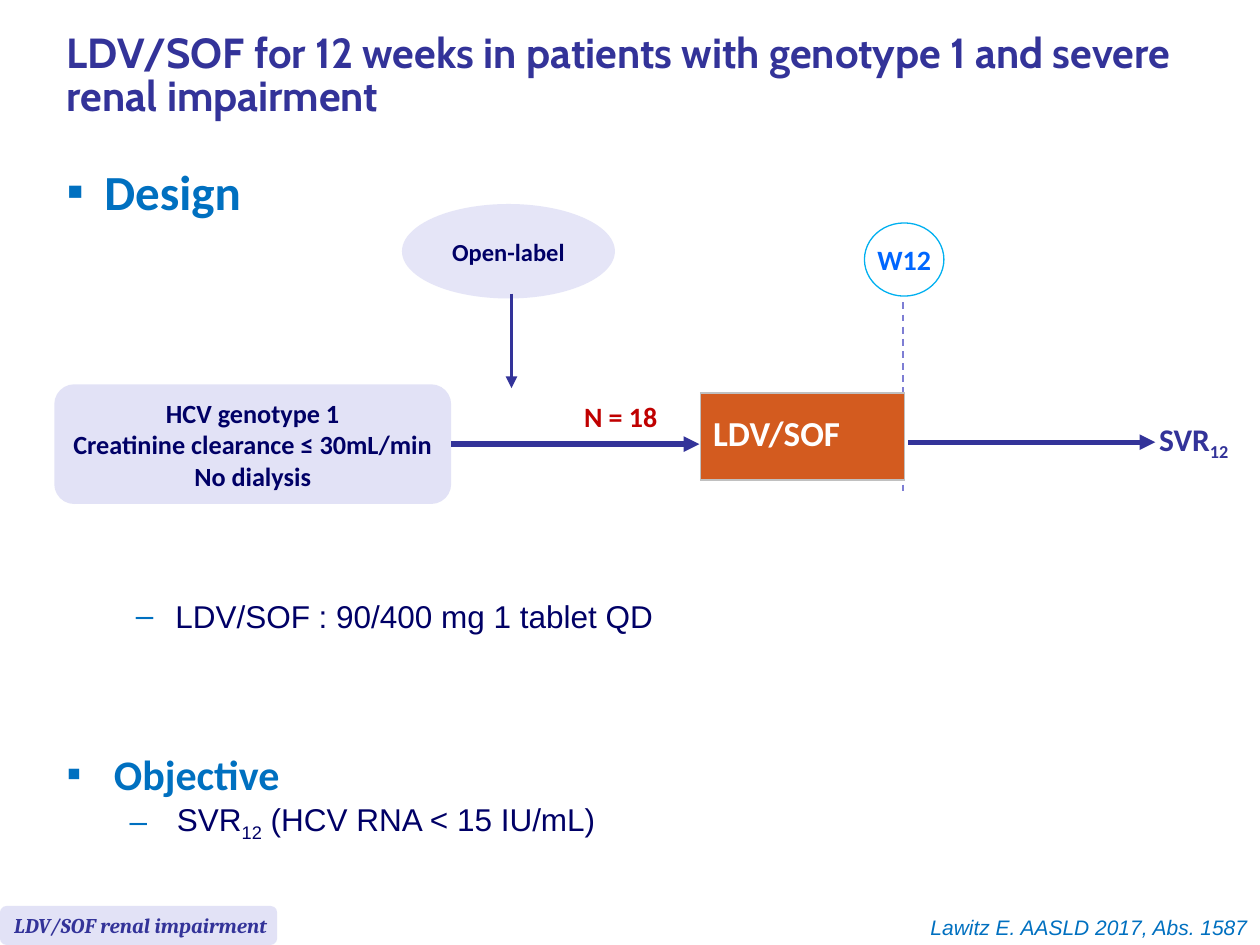
from dataclasses import dataclass

from lxml import etree
from pptx import Presentation
from pptx.dml.color import RGBColor
from pptx.enum import dml, shapes, text
from pptx.oxml import ns
from pptx.util import Pt


@dataclass(frozen=True)
class Theme:
    indigo: str = "333399"
    navy: str = "000066"
    blue: str = "0070C0"
    bright_blue: str = "0066FF"
    cyan: str = "00B0F0"
    red: str = "C00000"
    orange: str = "D35B1F"
    lavender: str = "E2E2F6"
    pale: str = "E5E5F7"
    dash: str = "7E7ED4"
    border: str = "C0C0C0"
    white: str = "FFFFFF"
    heading: int = 28
    title: int = 24
    treatment: int = 20
    body: int = 18
    label: int = 16
    criteria: int = 15
    small: int = 14
    footer: int = 12


theme = Theme()
LEFT, CENTER, RIGHT = text.PP_ALIGN.LEFT, text.PP_ALIGN.CENTER, text.PP_ALIGN.RIGHT


def write(paragraph, content, size, color, face="Calibri", bold=True, italic=False,
          align=LEFT, bullet=None, indent=0, hang=0):
    """Fill a paragraph; a "_" in the content switches subscript on and off."""
    properties = paragraph._p.get_or_add_pPr()
    if bullet:
        properties.set("marL", str(Pt(indent)))
        properties.set("indent", str(-Pt(hang)))
        bullet_color = etree.SubElement(properties, ns.qn("a:buClr"))
        etree.SubElement(bullet_color, ns.qn("a:srgbClr"), val=theme.blue)
        etree.SubElement(properties, ns.qn("a:buFont"), typeface="Arial")
        etree.SubElement(properties, ns.qn("a:buChar"), char=bullet)
    paragraph.alignment = align
    font = paragraph.font
    font.name, font.size, font.bold, font.italic = face, Pt(size), bold, italic
    font.color.rgb = RGBColor.from_string(color)
    for position, part in enumerate(content.split("_")):
        run = paragraph.add_run()
        run.text = part
        if position % 2:
            run._r.get_or_add_rPr().set("baseline", "-25000")


def add_line(start, end, color, width, arrow=True):
    line = slide.shapes.add_connector(
        shapes.MSO_CONNECTOR.STRAIGHT, *(Pt(value) for value in start + end))
    line.line.color.rgb = RGBColor.from_string(color)
    line.line.width = Pt(width)
    if arrow:
        etree.SubElement(line.line._get_or_add_ln(), ns.qn("a:tailEnd"), type="triangle")
    etree.SubElement(line._element.spPr, ns.qn("a:effectLst"))
    return line


presentation = Presentation()
presentation.slide_width, presentation.slide_height = Pt(720), Pt(540)
slide = presentation.slides.add_slide(presentation.slide_layouts[5])

# Title
title = slide.shapes.title
title.left, title.top, title.width, title.height = Pt(31), Pt(5.8), Pt(689), Pt(77)
title.text_frame.vertical_anchor = text.MSO_ANCHOR.MIDDLE
title.text_frame.auto_size = text.MSO_AUTO_SIZE.NONE
title_paragraph = title.text_frame.paragraphs[0]
title_paragraph.line_spacing = 0.85
write(title_paragraph,
      "LDV/SOF for 12 weeks in patients with genotype 1 and severe renal impairment",
      theme.title, theme.indigo, "Cabin")

# Week 12 marker, behind the treatment block
week_line = add_line((516.2, 172.8), (516.2, 280.8), theme.dash, 1, arrow=False)
week_line.line.dash_style = dml.MSO_LINE.DASH

# Treatment block
treatment = slide.shapes.add_table(1, 1, Pt(400.3), Pt(224.6), Pt(116.6), Pt(49.7)).table
cell = treatment.cell(0, 0)
cell.fill.solid()
cell.fill.fore_color.rgb = RGBColor.from_string(theme.orange)
cell.vertical_anchor = text.MSO_ANCHOR.MIDDLE
cell_paragraph = cell.text_frame.paragraphs[0]
cell_paragraph.line_spacing = 0.8
write(cell_paragraph, "LDV/SOF", theme.treatment, theme.white)
cell_properties = cell._tc.get_or_add_tcPr()
for index, side in enumerate(("lnL", "lnR", "lnT", "lnB")):
    edge = etree.Element(ns.qn("a:" + side), w=str(Pt(1)))
    edge_fill = etree.SubElement(edge, ns.qn("a:solidFill"))
    etree.SubElement(edge_fill, ns.qn("a:srgbClr"), val=theme.border)
    cell_properties.insert(index, edge)

# Filled shapes: preset, box, fill, outline, lines of text, size, colour, further style
OVAL, ROUNDED = shapes.MSO_SHAPE.OVAL, shapes.MSO_SHAPE.ROUNDED_RECTANGLE
centered = {"align": CENTER}
nodes = {}
for preset, box, fill, outline, lines, size, color, style in (
    (OVAL, (494, 127.4, 45.4, 41.8), theme.white, theme.cyan,
     ["W12"], theme.label, theme.bright_blue, centered),
    (ROUNDED, (31, 219.6, 226.8, 68.4), theme.lavender, None,
     ["HCV genotype 1", "Creatinine clearance ≤ 30mL/min", "No dialysis"],
     theme.criteria, theme.navy, centered),
    (OVAL, (229.7, 116.6, 121.7, 54), theme.pale, None,
     ["Open-label"], theme.small, theme.navy, centered),
    (ROUNDED, (0, 517.7, 158.4, 22.3), theme.lavender, None,
     ["LDV/SOF renal impairment"], theme.footer, theme.indigo,
     {"face": "Cambria", "italic": True}),
):
    shape = slide.shapes.add_shape(preset, *(Pt(value) for value in box))
    shape.shadow.inherit = False
    shape.fill.solid()
    shape.fill.fore_color.rgb = RGBColor.from_string(fill)
    if outline:
        shape.line.color.rgb = RGBColor.from_string(outline)
        shape.line.width = Pt(0.75)
    else:
        shape.line.fill.background()
    frame = shape.text_frame
    frame.word_wrap = len(lines) > 1
    frame.vertical_anchor = text.MSO_ANCHOR.MIDDLE
    for index, content in enumerate(lines):
        paragraph = frame.add_paragraph() if index else frame.paragraphs[0]
        write(paragraph, content, size, color, **style)
    nodes[lines[0]] = shape

# Flow arrows
enrolment = add_line((257.8, 253.8), (399.6, 253.8), theme.indigo, 3)
enrolment.begin_connect(nodes["HCV genotype 1"], 3)
add_line((519.1, 252.7), (660.2, 252.7), theme.indigo, 3)
add_line((292.3, 167.8), (292.3, 221.8), theme.indigo, 2.25)

# Text boxes: box, wrap, paragraphs of (content, size, colour, style)
plain = {"face": "Arial", "bold": False}
for box, wrap, paragraphs in (
    ((31, 88.6, 124.6, 33.8), True, [
        ("Design", theme.heading, theme.blue, {"bullet": "▪", "indent": 21.6, "hang": 21.6})]),
    ((326.2, 224.6, 56.9, 26.6), False, [("N = 18", theme.label, theme.red, centered)]),
    ((655.2, 236.2, 56.2, 28.8), False, [("SVR_12", theme.body, theme.indigo, {})]),
    ((70.6, 337.7, 312.5, 28.8), False, [
        ("LDV/SOF : 90/400 mg 1 tablet QD", theme.body, theme.navy,
         {**plain, "bullet": "‒", "indent": 22.5, "hang": 22.5})]),
    ((31, 424.1, 561.6, 83.5), True, [
        ("Objective", theme.title, theme.blue, {"bullet": "▪", "indent": 27, "hang": 27}),
        ("SVR_12_ (HCV RNA < 15 IU/mL)", theme.body, theme.navy,
         {**plain, "bullet": "–", "indent": 63, "hang": 27})]),
    ((190.1, 519.1, 529.9, 21.6), True, [
        ("Lawitz E. AASLD 2017, Abs. 1587", theme.footer, theme.blue,
         {**plain, "italic": True, "align": RIGHT})]),
):
    frame = slide.shapes.add_textbox(*(Pt(value) for value in box)).text_frame
    frame.word_wrap = wrap
    for index, (content, size, color, style) in enumerate(paragraphs):
        paragraph = frame.add_paragraph() if index else frame.paragraphs[0]
        write(paragraph, content, size, color, **style)
        if index:
            paragraph.space_before = Pt(0.7)

presentation.save("out.pptx")
